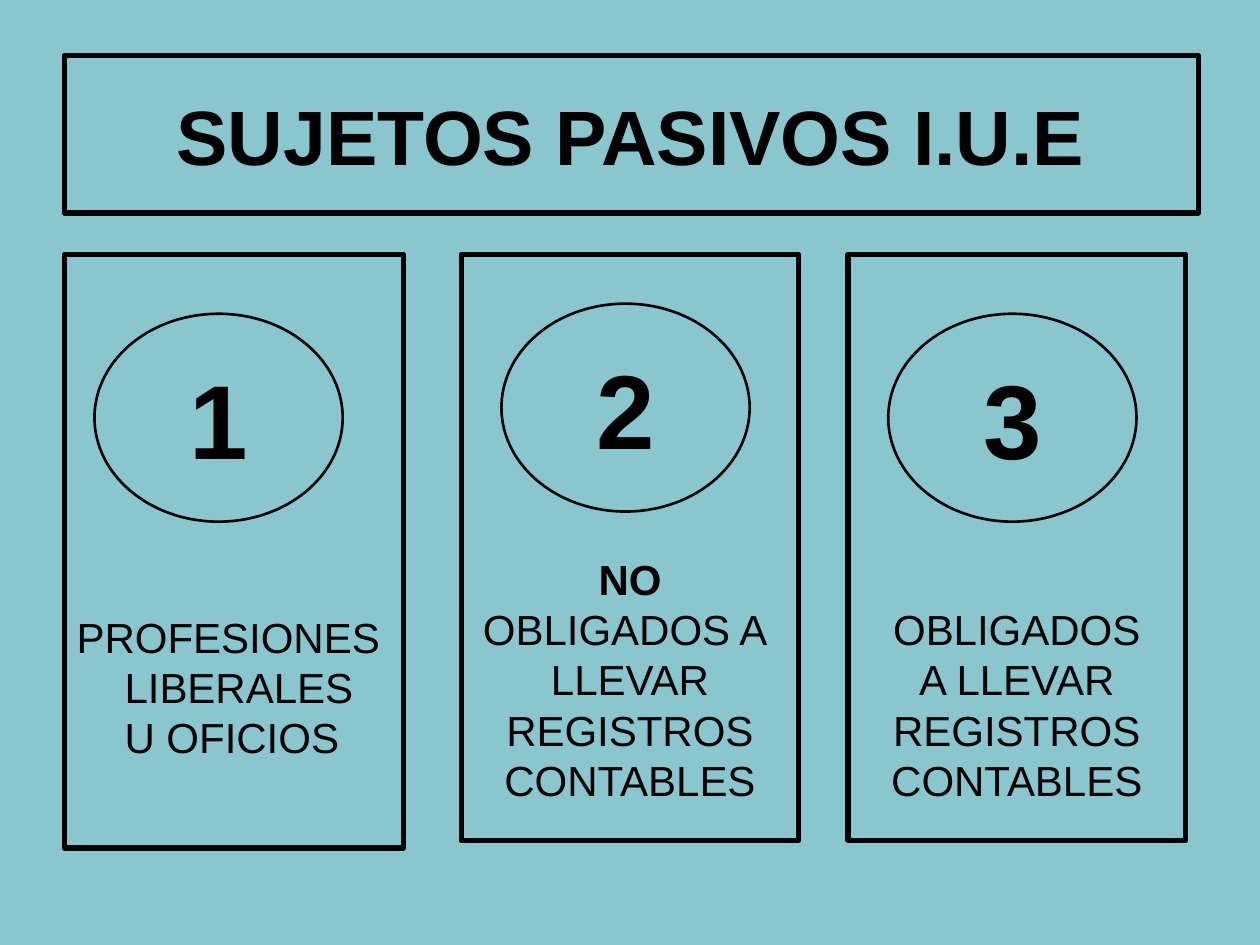
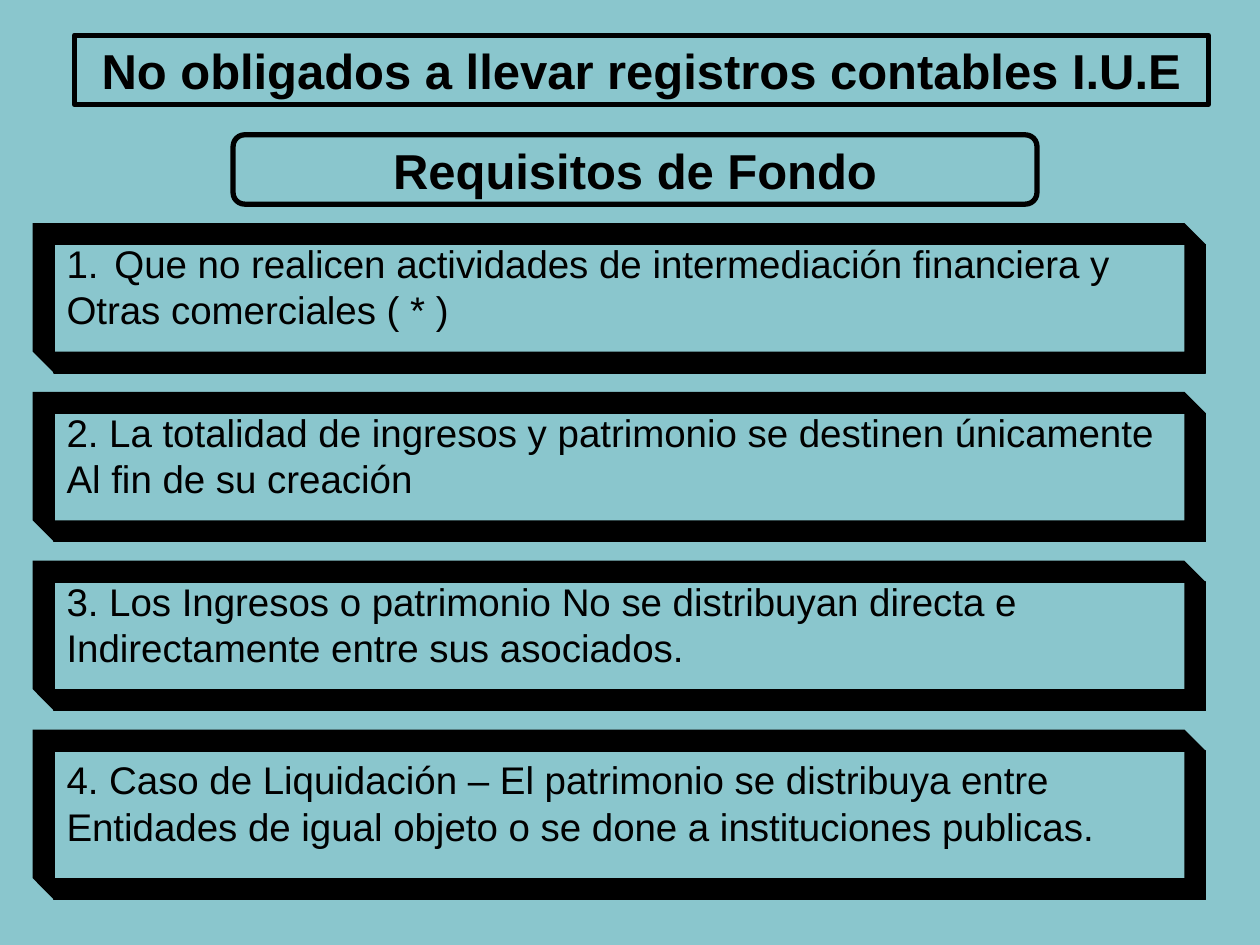
import pptx
import pptx.util
import pptx.dml.color
import pptx.enum.shapes
import pptx.enum.text
import lxml.etree

Inches = pptx.util.Inches
Pt = pptx.util.Pt
Shapes = pptx.enum.shapes.MSO_SHAPE
Anchor = pptx.enum.text.MSO_ANCHOR
Align = pptx.enum.text.PP_ALIGN

BACKGROUND = pptx.dml.color.RGBColor(0x8A, 0xC6, 0xCD)
INK = pptx.dml.color.RGBColor(0, 0, 0)
FONT = "Arial"
LINE_RATIO = 1.2

TAXPAYERS_TITLE = "SUJETOS PASIVOS I.U.E"
TAXPAYERS = [
    {"number": "1", "left": 0.51, "size": (2.69, 4.71), "oval": (0.75, 2.49),
     "lines": ["PROFESIONES LIBERALES U OFICIOS"], "hanging": True},
    {"number": "2", "left": 3.66, "size": (2.68, 4.65), "oval": (3.98, 2.41),
     "lines": ["NO", "OBLIGADOS A ", "LLEVAR", "REGISTROS", "CONTABLES"],
     "bold_first": True},
    {"number": "3", "left": 6.73, "size": (2.68, 4.65), "oval": (7.05, 2.49),
     "lines": ["OBLIGADOS", "A LLEVAR", "REGISTROS", "CONTABLES"]},
]

EXEMPT_TITLE = "No obligados a llevar registros contables I.U.E"
EXEMPT_SUBTITLE = "Requisitos de Fondo"
REQUIREMENTS = [
    ["Que no realicen actividades de intermediación financiera y",
     "Otras comerciales ( * )"],
    ["2. La totalidad de ingresos y patrimonio se destinen únicamente",
     "Al fin de su creación"],
    ["3. Los Ingresos o patrimonio No se distribuyan directa e",
     "Indirectamente entre sus asociados."],
    ["4. Caso de Liquidación – El patrimonio se distribuya entre",
     "Entidades de igual objeto o se done a instituciones publicas."],
]

COLUMN_TOP = 2.02
OVAL_SIZE = (1.97, 1.65)
HANGING = 0.38
FRAME_LEFT, FRAME_TOP, FRAME_WIDTH, FRAME_PITCH = 0.43, 1.94, 9.14, 1.34
FRAME_HEIGHTS = [1.02, 1.02, 1.02, 1.18]
FRAME_DEPTH = 0.17


def add_slide(deck):
    slide = deck.slides.add_slide(deck.slide_layouts[6])
    slide.background.fill.solid()
    slide.background.fill.fore_color.rgb = BACKGROUND
    return slide


def add_box(slide, outline, left, top, width, height, lines, size, weight=3,
            bold=False, align=Align.CENTER, anchor=Anchor.MIDDLE, wrap=True):
    box = slide.shapes.add_shape(
        outline, Inches(left), Inches(top), Inches(width), Inches(height))
    box.shadow.inherit = False
    box.fill.background()
    box.line.color.rgb = INK
    box.line.width = Pt(weight)
    frame = box.text_frame
    frame.word_wrap = wrap
    frame.vertical_anchor = anchor
    frame.text = "\n".join(lines)
    for paragraph in frame.paragraphs:
        paragraph.alignment = align
        if len(lines) > 1 or align == Align.LEFT:
            paragraph.line_spacing = Pt(size * LINE_RATIO)
        for run in paragraph.runs:
            run.font.name = FONT
            run.font.size = Pt(size)
            run.font.bold = bold
            run.font.color.rgb = INK
    return box


def hang(paragraph, numbered=False):
    properties = paragraph._p.get_or_add_pPr()
    properties.set("marL", str(Inches(HANGING)))
    properties.set("indent", str(-Inches(HANGING)))
    if numbered:
        namespace = lxml.etree.QName(properties).namespace
        numbering = lxml.etree.SubElement(properties, f"{{{namespace}}}buAutoNum")
        numbering.set("type", "arabicPeriod")


def add_column(slide, taxpayer):
    hanging = taxpayer.get("hanging", False)
    column = add_box(
        slide, Shapes.RECTANGLE, taxpayer["left"], COLUMN_TOP, *taxpayer["size"],
        taxpayer["lines"], 24, wrap=hanging,
        align=Align.LEFT if hanging else Align.CENTER,
        anchor=Anchor.TOP if hanging else Anchor.BOTTOM)
    frame = column.text_frame
    if hanging:
        frame.margin_top = Inches(2.83)
        hang(frame.paragraphs[0])
    else:
        frame.margin_bottom = Inches(0.28)
    if taxpayer.get("bold_first"):
        frame.paragraphs[0].runs[0].font.bold = True


def add_bevel(slide, left, top, width, height):
    right, bottom, depth = left + width, top + height, FRAME_DEPTH
    outer = [(left - depth, top - depth), (right - depth, top - depth),
             (right, top), (right, bottom), (left, bottom),
             (left - depth, bottom - depth)]
    inner = [(left, top), (left, bottom - depth),
             (right - depth, bottom - depth), (right - depth, top)]
    outer, inner = [[(Inches(x), Inches(y)) for x, y in corners]
                    for corners in (outer, inner)]
    builder = slide.shapes.build_freeform(*outer[0])
    builder.add_line_segments(outer[1:], close=True)
    builder.move_to(*inner[0])
    builder.add_line_segments(inner[1:], close=True)
    bevel = builder.convert_to_shape()
    bevel.shadow.inherit = False
    bevel.fill.solid()
    bevel.fill.fore_color.rgb = INK
    bevel.line.fill.background()


def add_requirement(slide, index, lines):
    place = (FRAME_LEFT, FRAME_TOP + index * FRAME_PITCH,
             FRAME_WIDTH, FRAME_HEIGHTS[index])
    add_bevel(slide, *place)
    requirement = add_box(slide, Shapes.RECTANGLE, *place, lines, 22,
                          weight=0.75, align=Align.LEFT)
    requirement.text_frame.margin_bottom = Inches(0.41)
    for number, paragraph in enumerate(requirement.text_frame.paragraphs):
        hang(paragraph, numbered=index == 0 and number == 0)


def build_taxpayers(deck):
    slide = add_slide(deck)
    add_box(slide, Shapes.RECTANGLE, 0.51, 0.44, 9, 1.25,
            [TAXPAYERS_TITLE], 44, bold=True)
    for taxpayer in TAXPAYERS:
        add_column(slide, taxpayer)
    for taxpayer in TAXPAYERS:
        add_box(slide, Shapes.OVAL, *taxpayer["oval"], *OVAL_SIZE,
                [taxpayer["number"]], 60, weight=1.5, bold=True, wrap=False)


def build_exempt(deck):
    slide = add_slide(deck)
    add_box(slide, Shapes.RECTANGLE, 0.59, 0.28, 9, 0.55,
            [EXEMPT_TITLE], 28, bold=True)
    add_box(slide, Shapes.ROUNDED_RECTANGLE, 1.85, 1.07, 6.38, 0.55,
            [EXEMPT_SUBTITLE], 28, bold=True)
    for index, lines in enumerate(REQUIREMENTS):
        add_requirement(slide, index, lines)


def main():
    deck = pptx.Presentation()
    deck.slide_width, deck.slide_height = Inches(10), Inches(7.5)
    build_taxpayers(deck)
    build_exempt(deck)
    deck.save("out.pptx")


if __name__ == "__main__":
    main()
